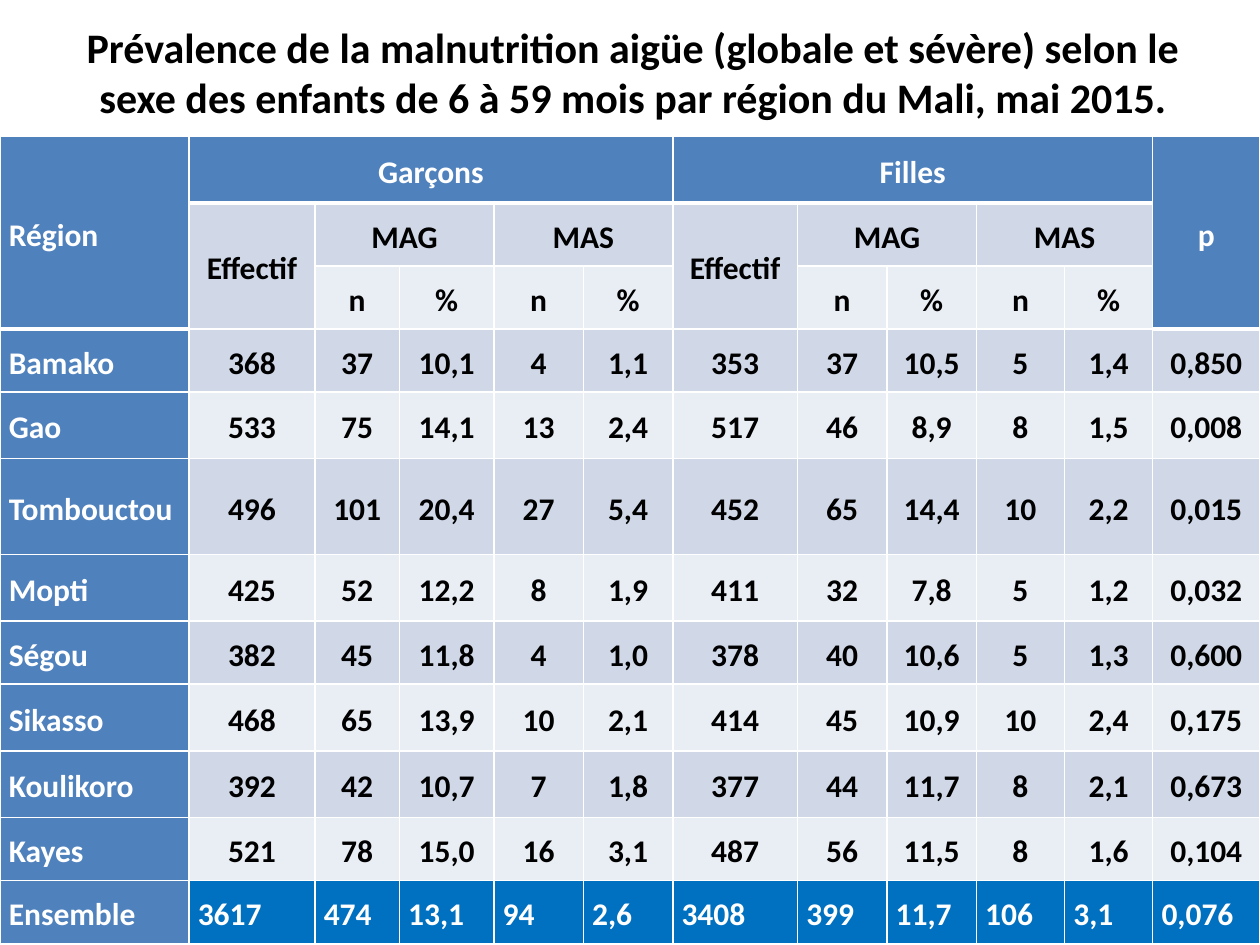
import pptx
import pptx.util
import pptx.dml.color
import pptx.enum.text
import lxml.etree
import pptx.oxml.ns

Inches, Pt = pptx.util.Inches, pptx.util.Pt
RGB = pptx.dml.color.RGBColor
ALIGN, ANCHOR = pptx.enum.text.PP_ALIGN, pptx.enum.text.MSO_ANCHOR
qn = pptx.oxml.ns.qn

WHITE, BLACK = RGB(0xFF, 0xFF, 0xFF), RGB(0, 0, 0)
HEADER, TOTAL = RGB(0x4F, 0x81, 0xBD), RGB(0x00, 0x70, 0xC0)
BANDS = RGB(0xE9, 0xED, 0xF4), RGB(0xD0, 0xD8, 0xE8)
FONT = "Calibri"

# Content
TITLE = ("Prévalence de la malnutrition aigüe (globale et sévère) selon le "
         "sexe des enfants de 6 à 59 mois par région du Mali, mai 2015.")
HEADINGS = [
    ["Région", "Garçons", "", "", "", "", "Filles", "", "", "", "", "p"],
    [""] + ["Effectif", "MAG", "", "MAS", ""] * 2 + [""],
    [""] + ["", "n", "%", "n", "%"] * 2 + [""],
]
REGIONS = [
    "Bamako 368 37 10,1 4 1,1 353 37 10,5 5 1,4 0,850",
    "Gao 533 75 14,1 13 2,4 517 46 8,9 8 1,5 0,008",
    "Tombouctou 496 101 20,4 27 5,4 452 65 14,4 10 2,2 0,015",
    "Mopti 425 52 12,2 8 1,9 411 32 7,8 5 1,2 0,032",
    "Ségou 382 45 11,8 4 1,0 378 40 10,6 5 1,3 0,600",
    "Sikasso 468 65 13,9 10 2,1 414 45 10,9 10 2,4 0,175",
    "Koulikoro 392 42 10,7 7 1,8 377 44 11,7 8 2,1 0,673",
    "Kayes 521 78 15,0 16 3,1 487 56 11,5 8 1,6 0,104",
    "Ensemble 3617 474 13,1 94 2,6 3408 399 11,7 106 3,1 0,076",
]
ROWS = HEADINGS + [line.split() for line in REGIONS]
COL_WIDTHS = [1.5, 1, 0.67, 0.75, 0.71, 0.71, 0.99, 0.71, 0.71, 0.7, 0.7, 0.85]
ROW_HEIGHTS = [0.53, 0.5, 0.5, 0.5, 0.53, 0.76, 0.53, 0.5, 0.53, 0.53, 0.5, 0.5]
LAST_ROW, LAST_COL = len(ROWS) - 1, len(COL_WIDTHS) - 1

# Merged headings: first row, first column, last row, last column
MERGES = [(0, 0, 2, 0), (0, LAST_COL, 2, LAST_COL)]
for c in (1, 6):
    MERGES += [(0, c, 0, c + 4), (1, c, 2, c),
               (1, c + 1, 1, c + 2), (1, c + 3, 1, c + 4)]


def add_run(p, text, size, color):
    r = p.add_run()
    r.text = text
    r.font.name, r.font.size, r.font.bold = FONT, Pt(size), True
    r.font.color.rgb = color


def add_border(cell, side, width):
    ln = lxml.etree.SubElement(cell._tc.get_or_add_tcPr(), qn("a:ln" + side),
                               w=str(Pt(width)))
    fill = lxml.etree.SubElement(ln, qn("a:solidFill"))
    lxml.etree.SubElement(fill, qn("a:srgbClr"), val=str(WHITE))


def is_header(row, col):
    return row == 0 or col == 0 or (row < 3 and col == LAST_COL)


def cell_fill(row, col):
    if is_header(row, col):
        return HEADER
    return TOTAL if row == LAST_ROW else BANDS[row % 2]


def format_cell(cell, row, col, text):
    # Borders, with a thick rule under the headings
    edge_col = col in (0, LAST_COL)
    thick = (row < 3) if edge_col else row == 0
    add_border(cell, "L", 1)
    add_border(cell, "R", 1)
    if row == 0:
        add_border(cell, "T", 1)
    add_border(cell, "B", 3 if thick else 1)
    cell.fill.solid()
    cell.fill.fore_color.rgb = cell_fill(row, col)

    # Text
    cell.vertical_anchor = ANCHOR.MIDDLE
    cell.margin_left = cell.margin_right = Inches(0.07)
    cell.margin_top = cell.margin_bottom = 0
    p = cell.text_frame.paragraphs[0]
    p.line_spacing = 1.15
    p.alignment = ALIGN.LEFT if col == 0 or row == LAST_ROW else ALIGN.CENTER
    if text:
        white = is_header(row, col) or row == LAST_ROW
        add_run(p, text, 18, WHITE if white else BLACK)


prs = pptx.Presentation()
prs.slide_width, prs.slide_height = Inches(10), Inches(7.5)
s = prs.slides.add_slide(prs.slide_layouts[5])

# Title
title = s.shapes.title
title.left, title.top = Inches(0.53), Inches(0.17)
title.width, title.height = Inches(8.99), Inches(1.08)
tf = title.text_frame
tf.word_wrap = True
tf.auto_size = pptx.enum.text.MSO_AUTO_SIZE.NONE
tf.vertical_anchor = ANCHOR.TOP
tf.margin_top = 0
p = tf.paragraphs[0]
p.alignment = ALIGN.CENTER
add_run(p, TITLE, 24, BLACK)

# Table
table = s.shapes.add_table(len(ROWS), len(COL_WIDTHS), 0, Inches(1.08),
                           Inches(10), Inches(sum(ROW_HEIGHTS))).table
for column, width in zip(table.columns, COL_WIDTHS):
    column.width = Inches(width)
for table_row, height in zip(table.rows, ROW_HEIGHTS):
    table_row.height = Inches(height)
for top, left, bottom, right in MERGES:
    table.cell(top, left).merge(table.cell(bottom, right))
for row, texts in enumerate(ROWS):
    for col, text in enumerate(texts):
        format_cell(table.cell(row, col), row, col, text)

prs.save("out.pptx")
